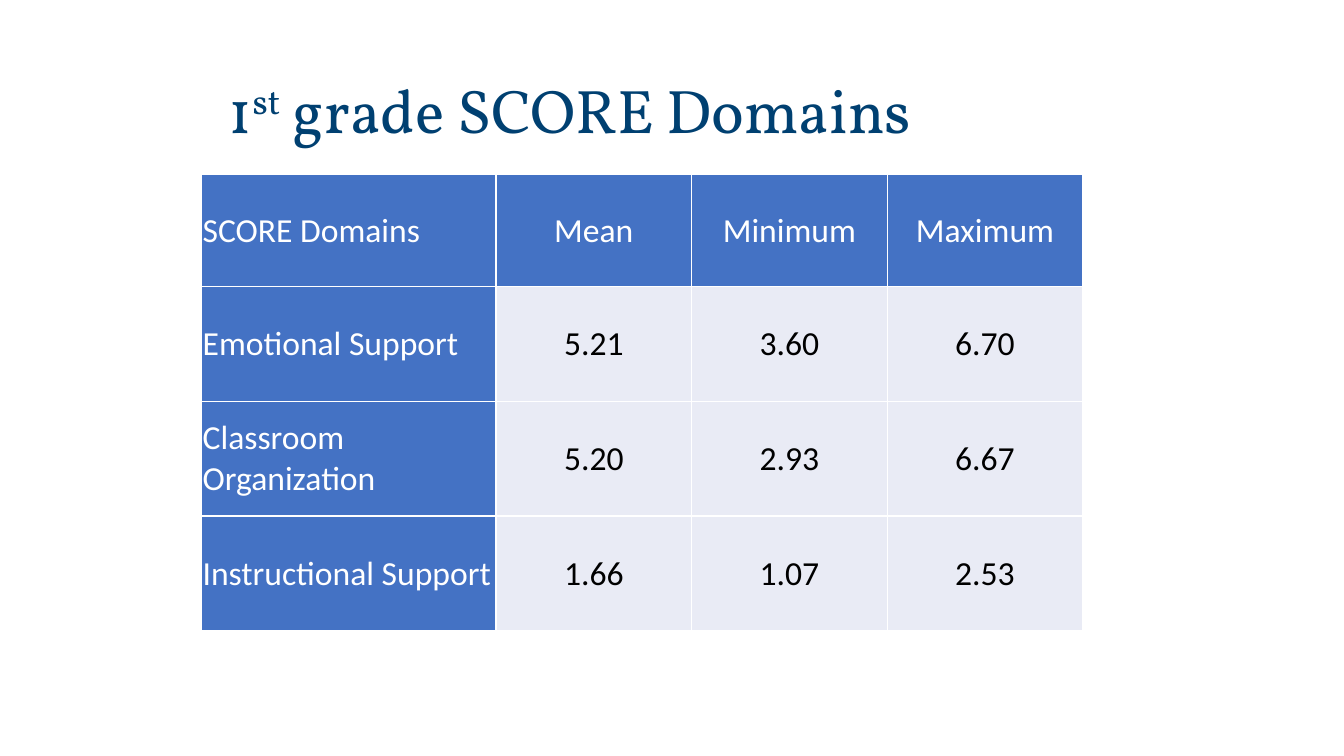
"""Build a slide with a table of 1st grade domain scores."""
from lxml.etree import SubElement
from pptx import Presentation
from pptx.dml.color import RGBColor
from pptx.enum.text import MSO_ANCHOR as Anchor, PP_ALIGN as Align
from pptx.oxml.ns import qn
from pptx.util import Inches, Pt

NAVY = RGBColor(0x00, 0x40, 0x71)
BLUE = RGBColor(0x44, 0x72, 0xC4)
PALE = RGBColor(0xE9, 0xEB, 0xF5)
WHITE = RGBColor(0xFF, 0xFF, 0xFF)
BLACK = RGBColor(0x00, 0x00, 0x00)

SCORES = [
    ["SCORE Domains", "Mean", "Minimum", "Maximum"],
    ["Emotional Support", "5.21", "3.60", "6.70"],
    ["Classroom Organization", "5.20", "2.93", "6.67"],
    ["Instructional Support", "1.66", "1.07", "2.53"],
]
COLUMN_WIDTHS = [2.92, 1.94, 1.94, 1.94]
ROW_HEIGHTS = [1.11, 1.14, 1.14, 1.14]
CELL_FORMAT = {
    "vertical_anchor": Anchor.MIDDLE,
    "margin_left": Inches(0.01),
    "margin_right": Inches(0.01),
    "margin_top": Inches(0.01),
    "margin_bottom": Inches(0),
}


def set_format(target, values):
    for name, value in values.items():
        setattr(target, name, value)


def add_border(cell, side):
    line = SubElement(cell._tc.get_or_add_tcPr(), qn(f"a:ln{side}"), w=str(Pt(1)))
    fill = SubElement(line, qn("a:solidFill"))
    SubElement(fill, qn("a:srgbClr"), val=str(WHITE))


presentation = Presentation()
presentation.slide_width = Inches(13.33)
presentation.slide_height = Inches(7.5)
slide = presentation.slides.add_slide(presentation.slide_layouts[6])

title = slide.shapes.add_textbox(Inches(2.17), Inches(0.5), Inches(8.33), Inches(1.25))
set_format(title.text_frame, {"word_wrap": True, "vertical_anchor": Anchor.MIDDLE})
paragraph = title.text_frame.paragraphs[0]
paragraph.line_spacing = 0.9
for text, baseline in [("1", 0), ("st", 30000), (" grade SCORE Domains", 0)]:
    run = paragraph.add_run()
    run.text = text
    set_format(run.font, {"name": "Vollkorn", "size": Pt(44)})
    run.font.color.rgb = NAVY
    if baseline:
        run.font._element.set("baseline", str(baseline))

table = slide.shapes.add_table(
    len(SCORES), len(COLUMN_WIDTHS), Inches(2), Inches(1.73),
    Inches(sum(COLUMN_WIDTHS)), Inches(sum(ROW_HEIGHTS)),
).table
for column, width in zip(table.columns, COLUMN_WIDTHS):
    column.width = Inches(width)
for row, height in zip(table.rows, ROW_HEIGHTS):
    row.height = Inches(height)

for row_index, values in enumerate(SCORES):
    for column_index, value in enumerate(values):
        is_heading = row_index == 0 or column_index == 0
        cell = table.cell(row_index, column_index)
        set_format(cell, CELL_FORMAT)
        for side in "LRTB":
            add_border(cell, side)
        cell.fill.solid()
        cell.fill.fore_color.rgb = BLUE if is_heading else PALE
        cell.text = value
        paragraph = cell.text_frame.paragraphs[0]
        paragraph.alignment = Align.CENTER if column_index else Align.LEFT
        font = paragraph.runs[0].font
        set_format(font, {"name": "Calibri", "size": Pt(24), "bold": False})
        font.color.rgb = WHITE if is_heading else BLACK

presentation.save("out.pptx")
